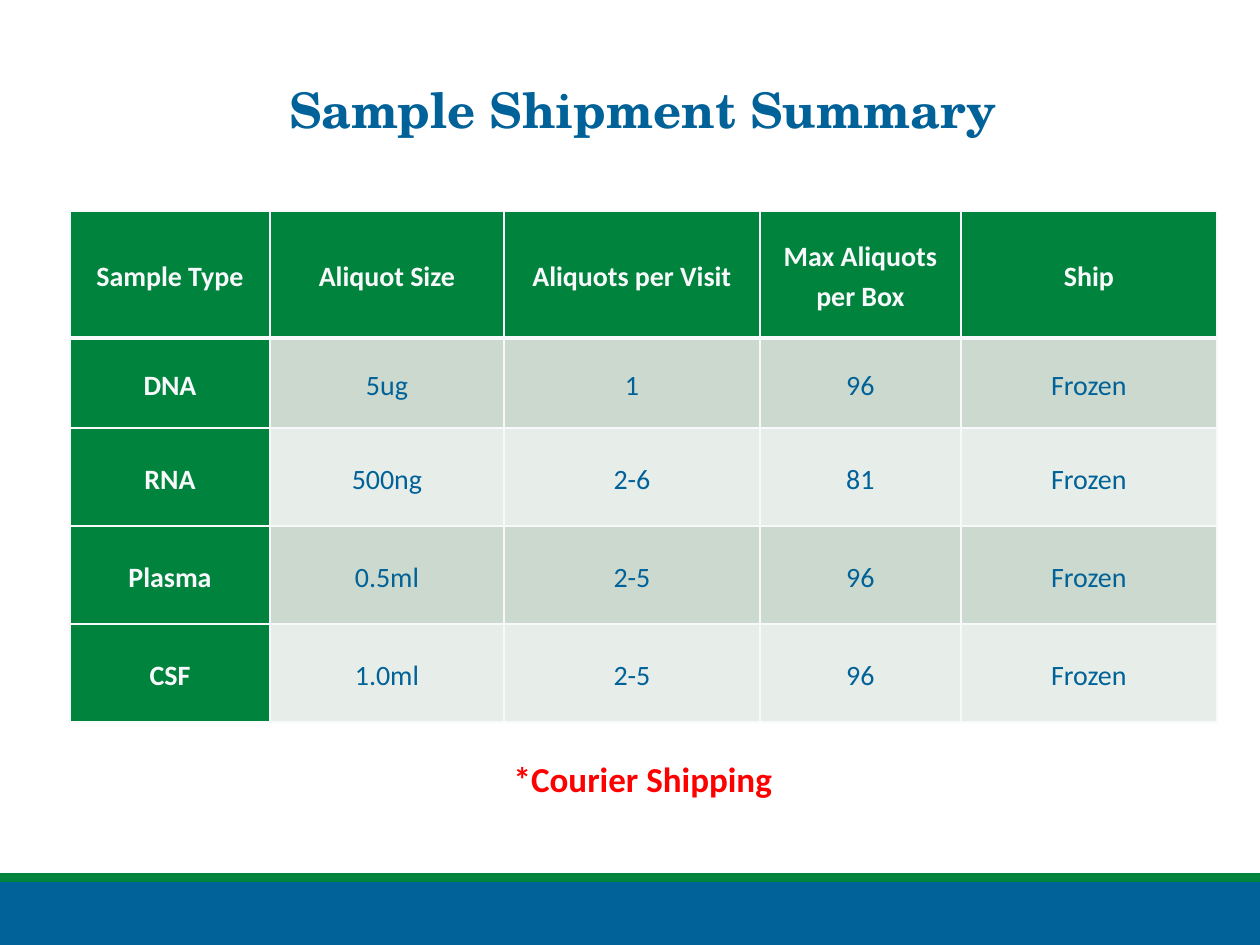
from dataclasses import dataclass

import pptx
import pptx.dml.color
import pptx.enum.shapes
import pptx.enum.text
import pptx.oxml
import pptx.oxml.ns
import pptx.util

PX_PER_INCH = 126
COLORS = {
    "blue": "006298",
    "green": "00843D",
    "red": "FF0000",
    "light": "F8F9FA",
    "band_dark": "CCD9CE",
    "band_light": "E7EDE8",
}
COLUMN_WIDTHS = [200, 234, 256, 201, 256]
ROW_HEIGHTS = [127, 90, 98, 98, 98]
ROWS = [
    ["Sample Type", "Aliquot Size", "Aliquots per Visit", "Max Aliquots per Box", "Ship"],
    ["DNA", "5ug", "1", "96", "Frozen"],
    ["RNA", "500ng", "2-6", "81", "Frozen"],
    ["Plasma", "0.5ml", "2-5", "96", "Frozen"],
    ["CSF", "1.0ml", "2-5", "96", "Frozen"],
]


@dataclass(frozen=True)
class Area:
    left: int
    top: int
    width: int
    height: int

    def emu(self) -> tuple:
        return tuple(px(n) for n in (self.left, self.top, self.width, self.height))


@dataclass(frozen=True)
class Stripe:
    area: Area
    color: str


TITLE = Area(100, 86, 1086, 98)
NOTE = Area(340, 751, 606, 55)
TABLE = Area(70, 211, sum(COLUMN_WIDTHS), sum(ROW_HEIGHTS))
STRIPES = [
    Stripe(Area(0, 882, 1260, 63), "blue"),
    Stripe(Area(0, 873, 1260, 9), "green"),
]


def px(length: int) -> pptx.util.Emu:
    return pptx.util.Emu(round(length * pptx.util.Inches(1) / PX_PER_INCH))


def rgb(name: str) -> pptx.dml.color.RGBColor:
    return pptx.dml.color.RGBColor.from_string(COLORS[name])


def write(frame, text: str, *, size: int, color: str, font: str = "Calibri",
          bold: bool = True, line_spacing: float = 1.0, space_after: int = 0) -> None:
    frame.word_wrap = True
    para = frame.paragraphs[0]
    para.alignment = pptx.enum.text.PP_ALIGN.CENTER
    para.line_spacing = line_spacing
    para.space_before = pptx.util.Pt(0)
    para.space_after = pptx.util.Pt(space_after)
    span = para.add_run()
    span.text = text
    span.font.name = font
    span.font.size = pptx.util.Pt(size)
    span.font.bold = bold
    span.font.color.rgb = rgb(color)


def draw_stripe(page, stripe: Stripe) -> None:
    shape = page.shapes.add_shape(pptx.enum.shapes.MSO_SHAPE.RECTANGLE, *stripe.area.emu())
    shape.shadow.inherit = False
    shape.fill.solid()
    shape.fill.fore_color.rgb = rgb(stripe.color)
    shape.line.fill.background()


def set_borders(cell, *, top: int, bottom: int) -> None:
    properties = cell._tc.get_or_add_tcPr()
    for side, points in {"L": 1, "R": 1, "T": top, "B": bottom}.items():
        properties.append(pptx.oxml.parse_xml(
            f'<a:ln{side} {pptx.oxml.ns.nsdecls("a")} w="{pptx.util.Pt(points)}">'
            f'<a:solidFill><a:srgbClr val="{COLORS["light"]}"/></a:solidFill></a:ln{side}>'
        ))


def draw_cell(cell, text: str, row: int, column: int) -> None:
    heading = row == 0 or column == 0
    band = "band_dark" if row % 2 else "band_light"
    set_borders(cell, top=3 if row == 1 else 1, bottom=3 if row == 0 else 1)
    cell.fill.solid()
    cell.fill.fore_color.rgb = rgb("green" if heading else band)
    cell.vertical_anchor = pptx.enum.text.MSO_ANCHOR.MIDDLE
    cell.margin_left = cell.margin_right = px(9)
    cell.margin_top = cell.margin_bottom = 0
    write(cell.text_frame, text, size=16, color="light" if heading else "blue",
          bold=heading, line_spacing=1.15, space_after=8)


def draw_table(page) -> None:
    table = page.shapes.add_table(len(ROWS), len(COLUMN_WIDTHS), *TABLE.emu()).table
    for column, width in zip(table.columns, COLUMN_WIDTHS):
        column.width = px(width)
    for row, height in zip(table.rows, ROW_HEIGHTS):
        row.height = px(height)
    for row, texts in enumerate(ROWS):
        for column, text in enumerate(texts):
            draw_cell(table.cell(row, column), text, row, column)


def draw_title(page) -> None:
    title = page.shapes.title
    title.left, title.top, title.width, title.height = TITLE.emu()
    frame = title.text_frame
    frame.auto_size = pptx.enum.text.MSO_AUTO_SIZE.NONE
    frame.vertical_anchor = pptx.enum.text.MSO_ANCHOR.TOP
    frame.margin_top = frame.margin_bottom = 0
    write(frame, "Sample Shipment Summary", size=28, color="blue",
          font="TeX Gyre Schola", line_spacing=0.9)


def main() -> None:
    deck = pptx.Presentation()
    deck.slide_width = px(1260)
    deck.slide_height = px(945)
    page = deck.slides.add_slide(deck.slide_layouts[5])
    for stripe in STRIPES:
        draw_stripe(page, stripe)
    draw_title(page)
    box = page.shapes.add_textbox(*NOTE.emu())
    write(box.text_frame, "*Courier Shipping", size=20, color="red")
    draw_table(page)
    deck.save("out.pptx")


if __name__ == "__main__":
    main()
